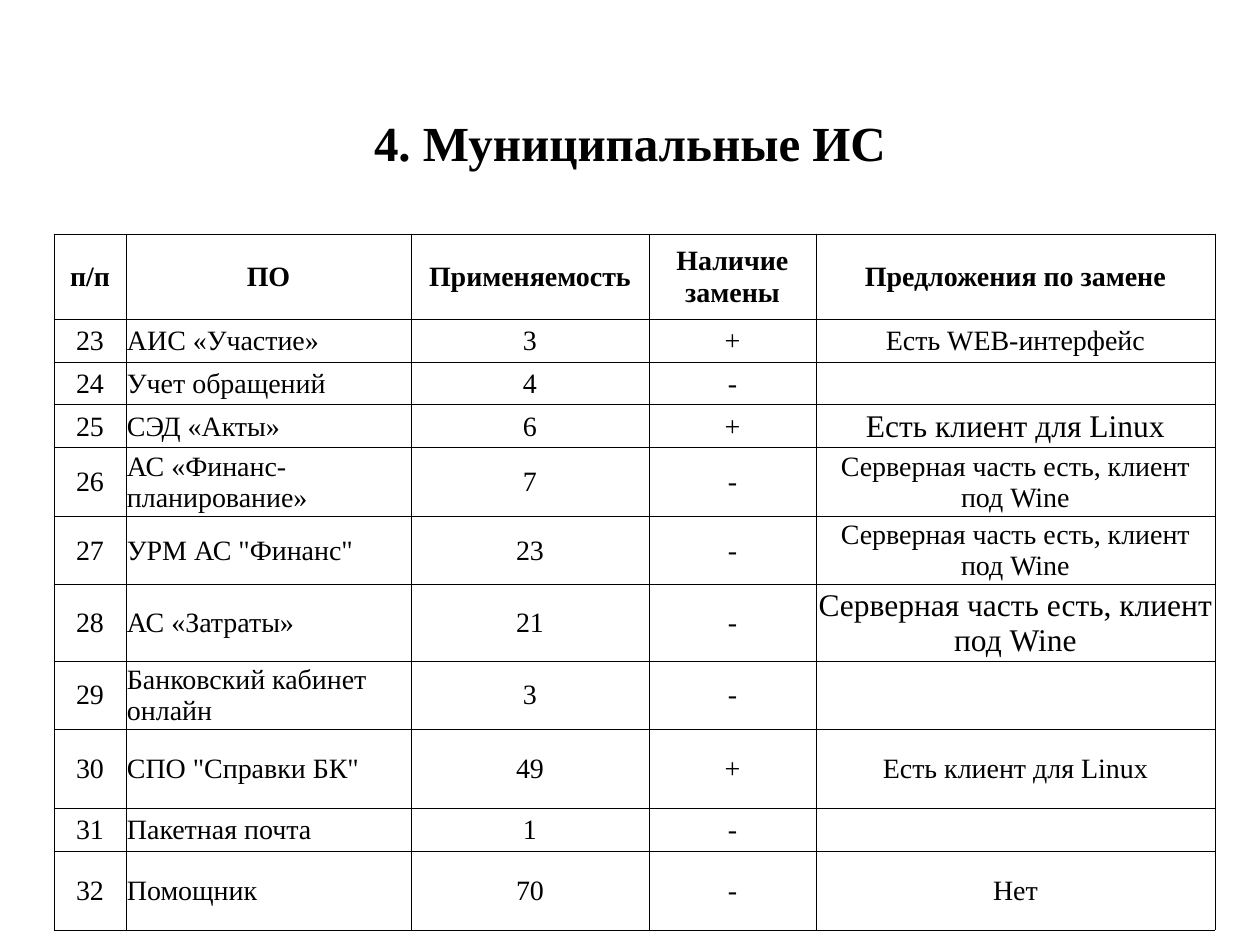
from lxml import etree
from pptx import Presentation
from pptx import util as u
from pptx.dml.color import RGBColor
from pptx.enum import text
from pptx.oxml.ns import qn

PX = 914400 // 126
BLACK = RGBColor(0, 0, 0)
FONT = "Times New Roman"


def style(p, size, bold, align):
    p.alignment = align
    p.font.name = FONT
    p.font.size = u.Pt(size)
    p.font.bold = bold
    p.font.color.rgb = BLACK


def add_borders(cell):
    tcPr = cell._tc.get_or_add_tcPr()
    for side in ("lnL", "lnR", "lnT", "lnB"):
        ln = etree.SubElement(tcPr, qn(f"a:{side}"), w=str(u.Pt(0.5)))
        fill = etree.SubElement(ln, qn("a:solidFill"))
        etree.SubElement(fill, qn("a:srgbClr"), val=str(BLACK))


prs = Presentation()
prs.slide_width = u.Inches(10)
prs.slide_height = u.Inches(7.5)
s = prs.slides.add_slide(prs.slide_layouts[6])

# Title
sp = s.shapes.add_textbox(87 * PX, 50 * PX, 1086 * PX, 183 * PX)
tf = sp.text_frame
tf.word_wrap = True
tf.vertical_anchor = text.MSO_ANCHOR.MIDDLE
tf.margin_left = tf.margin_right = tf.margin_top = tf.margin_bottom = 0
p = tf.paragraphs[0]
p.text = "4. Муниципальные ИС"
style(p, 28, True, text.PP_ALIGN.CENTER)

# Table content
SERVER = "Серверная часть есть, клиент под Wine"
CLIENT = "Есть клиент для Linux"
rows = [
    ("п/п", "ПО", "Применяемость", "Наличие замены", "Предложения по замене"),
    ("23", "АИС «Участие»", "3", "+", "Есть WEB-интерфейс"),
    ("24", "Учет обращений", "4", "-", ""),
    ("25", "СЭД «Акты»", "6", "+", CLIENT),
    ("26", "АС «Финанс-планирование»", "7", "-", SERVER),
    ("27", "УРМ АС \"Финанс\"", "23", "-", SERVER),
    ("28", "АС «Затраты»", "21", "-", SERVER),
    ("29", "Банковский кабинет онлайн", "3", "-", ""),
    ("30", "СПО \"Справки БК\"", "49", "+", CLIENT),
    ("31", "Пакетная почта", "1", "-", ""),
    ("32", "Помощник", "70", "-", "Нет"),
]
col_widths = [72, 285, 238, 167, 399]
row_heights = [85] + [43] * 7 + [79, 43, 79]
large_cells = {(3, 4), (6, 4)}

# Table
table = s.shapes.add_table(len(rows), len(col_widths), 54 * PX, 234 * PX,
                           sum(col_widths) * PX, sum(row_heights) * PX).table
table.first_row = table.horz_banding = False
for col, width in zip(table.columns, col_widths):
    col.width = width * PX
for row, height in zip(table.rows, row_heights):
    row.height = height * PX

for i, values in enumerate(rows):
    for j, value in enumerate(values):
        cell = table.cell(i, j)
        cell.margin_left = cell.margin_right = cell.margin_top = PX
        cell.margin_bottom = 0
        cell.vertical_anchor = text.MSO_ANCHOR.MIDDLE
        add_borders(cell)
        cell.fill.background()
        p = cell.text_frame.paragraphs[0]
        p.text = value
        left = i > 0 and j == 1
        style(p, 18 if (i, j) in large_cells else 16, i == 0,
              text.PP_ALIGN.LEFT if left else text.PP_ALIGN.CENTER)

prs.save("out.pptx")
